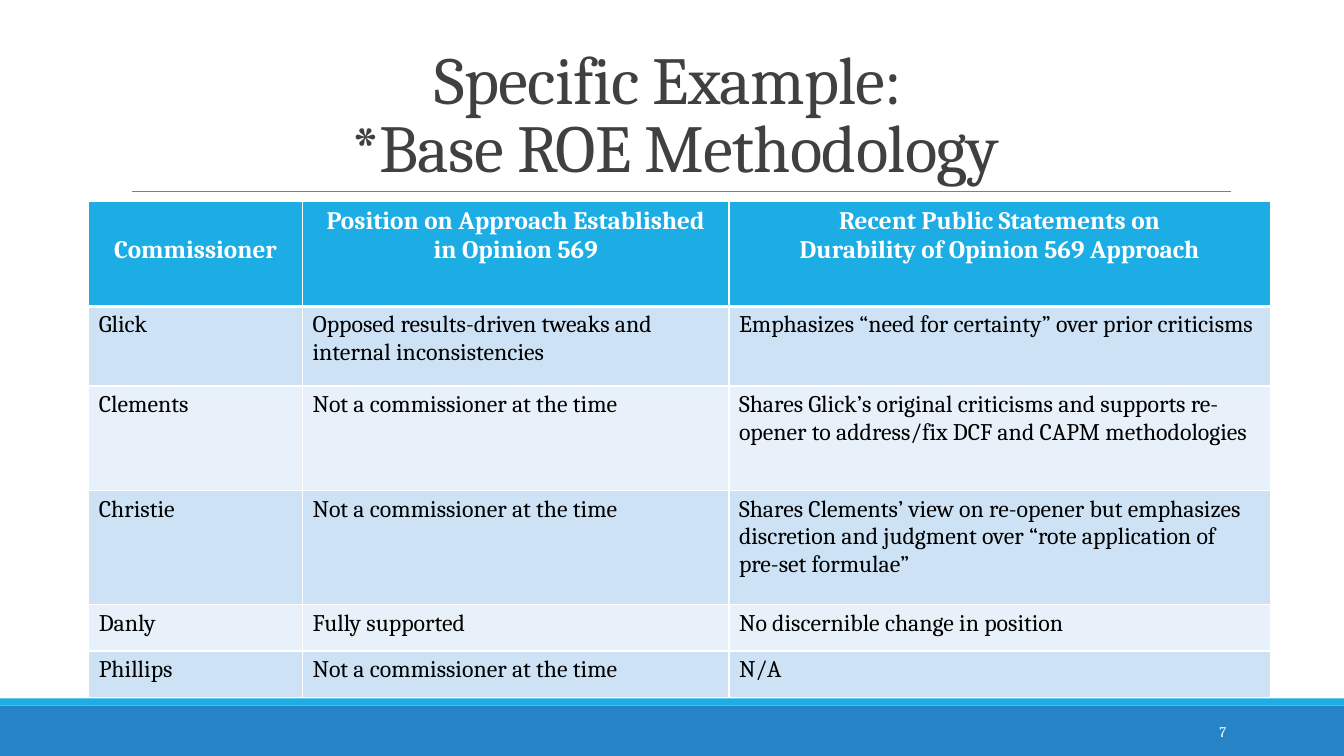
from lxml import etree
from pptx import Presentation
from pptx import util as u
from pptx.dml.color import RGBColor
from pptx.enum import shapes, text
from pptx.oxml import ns

FONT = "Cambria"
WHITE = "FFFFFF"
ACCENT = "1CADE4"
BANDS = ("CDE3F5", "E8F1FA")
COLUMN_WIDTHS = (2.12, 4.23, 5.37)
ROW_HEIGHTS = (1.04, 0.79, 1.04, 1.13, 0.46, 0.46)
ROWS = (
    ("Commissioner", "Position on Approach Established in Opinion 569",
     "Recent Public Statements on\nDurability of Opinion 569 Approach"),
    ("Glick", "Opposed results-driven tweaks and internal inconsistencies",
     "Emphasizes “need for certainty” over prior criticisms"),
    ("Clements", "Not a commissioner at the time",
     "Shares Glick’s original criticisms and supports re-opener to address/fix "
     "DCF and CAPM methodologies"),
    ("Christie", "Not a commissioner at the time",
     "Shares Clements’ view on re-opener but emphasizes discretion and judgment "
     "over “rote application of pre-set formulae”"),
    ("Danly", "Fully supported", "No discernible change in position"),
    ("Phillips", "Not a commissioner at the time", "N/A"),
)


def color(value):
    return RGBColor.from_string(value)


def format_text(frame, size, font_color, align, bold=False):
    for paragraph in frame.paragraphs:
        paragraph.alignment = align
        for run in paragraph.runs:
            run.font.name = FONT
            run.font.size = u.Pt(size)
            run.font.bold = bold
            run.font.color.rgb = color(font_color)


def add_bar(slide, top, height, fill):
    bar = slide.shapes.add_shape(shapes.MSO_SHAPE.RECTANGLE, 0, u.Inches(top),
                                 u.Inches(13.33), u.Inches(height))
    bar.shadow.inherit = False
    bar.fill.solid()
    bar.fill.fore_color.rgb = color(fill)
    bar.line.fill.background()


def add_rule(slide, left, right, top):
    rule = slide.shapes.add_connector(shapes.MSO_CONNECTOR.STRAIGHT, u.Inches(left),
                                      u.Inches(top), u.Inches(right), u.Inches(top))
    rule.line.color.rgb = color("808080")
    rule.line.width = u.Pt(0.5)
    etree.SubElement(rule._element.spPr, ns.qn("a:effectLst"))


def set_title(slide, wording):
    title = slide.shapes.title
    title.left, title.top = u.Inches(1.2), u.Inches(0.31)
    title.width, title.height = u.Inches(11), u.Inches(1.59)
    frame = title.text_frame
    frame.text = wording
    frame.word_wrap = True
    frame.auto_size = text.MSO_AUTO_SIZE.NONE
    frame.vertical_anchor = text.MSO_ANCHOR.BOTTOM
    format_text(frame, 48, "404040", text.PP_ALIGN.CENTER)
    frame.paragraphs[0].line_spacing = 0.85
    for run in frame.paragraphs[0].runs:
        run.font._element.set("spc", "-50")


def set_borders(cell, top, bottom):
    properties = cell._tc.get_or_add_tcPr()
    for side, width in (("L", 1), ("R", 1), ("T", top), ("B", bottom)):
        line = etree.SubElement(properties, ns.qn(f"a:ln{side}"), w=str(u.Pt(width)))
        fill = etree.SubElement(line, ns.qn("a:solidFill"))
        etree.SubElement(fill, ns.qn("a:srgbClr"), val=WHITE)


def fill_cell(cell, wording, row):
    header = row == 0
    cell.text_frame.text = wording
    set_borders(cell, 3 if row == 1 else 1, 3 if header else 1)
    cell.fill.solid()
    cell.fill.fore_color.rgb = color(ACCENT if header else BANDS[(row - 1) % 2])
    if header:
        format_text(cell.text_frame, 18, WHITE, text.PP_ALIGN.CENTER, True)
    else:
        format_text(cell.text_frame, 17, "000000", text.PP_ALIGN.LEFT)


def add_positions_table(slide):
    frame = slide.shapes.add_table(len(ROWS), len(COLUMN_WIDTHS), u.Inches(0.88), u.Inches(2),
                                   u.Inches(sum(COLUMN_WIDTHS)), u.Inches(sum(ROW_HEIGHTS)))
    table = frame.table
    for column, width in zip(table.columns, COLUMN_WIDTHS):
        column.width = u.Inches(width)
    for row, (wordings, height) in enumerate(zip(ROWS, ROW_HEIGHTS)):
        table.rows[row].height = u.Inches(height)
        for column, wording in enumerate(wordings):
            fill_cell(table.cell(row, column), wording, row)
    table.cell(0, 0).margin_top = u.Inches(0.34)


def add_page_number(slide, number):
    box = slide.shapes.add_textbox(u.Inches(10.83), u.Inches(7.06),
                                   u.Inches(1.43), u.Inches(0.4))
    frame = box.text_frame
    frame.text = number
    frame.word_wrap = True
    frame.vertical_anchor = text.MSO_ANCHOR.MIDDLE
    format_text(frame, 10.5, WHITE, text.PP_ALIGN.RIGHT)


def main():
    presentation = Presentation()
    presentation.slide_width = u.Inches(13.33)
    presentation.slide_height = u.Inches(7.5)
    slide = presentation.slides.add_slide(presentation.slide_layouts[5])
    add_bar(slide, 7, 0.5, "2683C6")
    add_bar(slide, 6.93, 0.07, ACCENT)
    add_rule(slide, 1.31, 12.21, 1.9)
    set_title(slide, "Specific Example: \v*Base ROE Methodology")
    add_positions_table(slide)
    add_page_number(slide, "7")
    presentation.save("out.pptx")


if __name__ == "__main__":
    main()
